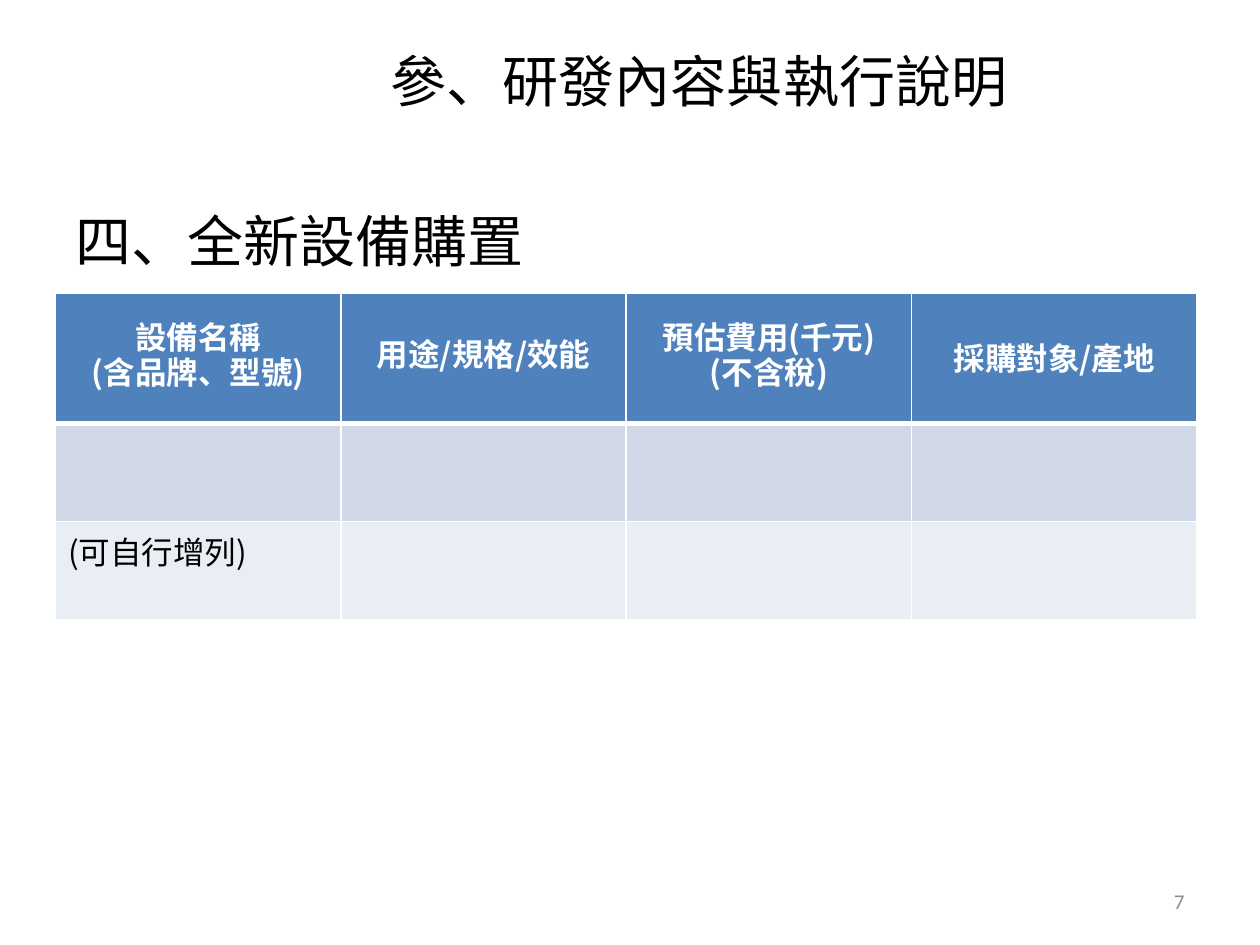
from lxml import etree
from pptx import Presentation
from pptx.dml.color import RGBColor
from pptx.enum.text import MSO_ANCHOR, PP_ALIGN
from pptx.oxml.ns import qn
from pptx.util import Inches, Pt

LEFT, MID, RIGHT = PP_ALIGN.LEFT, PP_ALIGN.CENTER, PP_ALIGN.RIGHT
TOP, CENTER = MSO_ANCHOR.TOP, MSO_ANCHOR.MIDDLE
CJK = "Noto Sans CJK SC"
HEADS = [
    (["設備名稱", "(含品牌、型號)"], 20),
    (["用途/規格/效能"], 20),
    (["預估費用(千元)", "(不含稅)"], 20),
    (["採購對象/產地"], 24),
]
NOTE = "(可自行增列)"
BANDS = ["4F81BD", "D0D8E8", "E9EDF4"]
ROWS = [1.03, 0.78, 0.78]
WIDTH = 9.06


def color(code):
    return RGBColor.from_string(code)


def assign(item, values):
    for name, value in values.items():
        setattr(item, name, value)


def write(frame, lines, size, ink="000000", face=CJK, bold=False, **para):
    for i, line in enumerate(lines):
        p = frame.paragraphs[0] if i == 0 else frame.add_paragraph()
        assign(p, para)
        run = p.add_run()
        run.text = line
        assign(run.font, {"size": Pt(size), "name": face, "bold": bold})
        run.font.color.rgb = color(ink)
        props = run.font._element
        etree.SubElement(props, qn("a:ea")).set("typeface", face)


def add_text(slide, box, line, size, anchor=CENTER, inset=0.05, **style):
    frame = slide.shapes.add_textbox(*map(Inches, box)).text_frame
    assign(frame, {"word_wrap": True, "vertical_anchor": anchor,
                   "margin_top": Inches(inset)})
    write(frame, [line], size, **style)


def edge(cell, side, width):
    line = etree.SubElement(cell._tc.get_or_add_tcPr(), qn("a:" + side))
    line.set("w", str(Pt(width)))
    fill = etree.SubElement(line, qn("a:solidFill"))
    etree.SubElement(fill, qn("a:srgbClr")).set("val", "FFFFFF")


def paint(cell, row):
    for side in ("lnL", "lnR", "lnT", "lnB"):
        thick = (row, side) in ((0, "lnB"), (1, "lnT"))
        edge(cell, side, 3 if thick else 1)
    cell.fill.solid()
    cell.fill.fore_color.rgb = color(BANDS[row])


def add_grid(slide):
    box = map(Inches, (0.44, 2.33, WIDTH, sum(ROWS)))
    grid = slide.shapes.add_table(len(ROWS), len(HEADS), *box).table
    for col in grid.columns:
        col.width = Inches(WIDTH / len(HEADS))
    for r, height in enumerate(ROWS):
        grid.rows[r].height = Inches(height)
        for c in range(len(HEADS)):
            paint(grid.cell(r, c), r)
    for c, (lines, space) in enumerate(HEADS):
        cell = grid.cell(0, c)
        assign(cell, {"vertical_anchor": CENTER,
                      "margin_left": Inches(0.07), "margin_right": Inches(0.07),
                      "margin_top": 0, "margin_bottom": 0})
        write(cell.text_frame, lines, 18, ink="FFFFFF", bold=True,
              alignment=MID, line_spacing=Pt(space))
    write(grid.cell(2, 0).text_frame, [NOTE], 18)


def main():
    deck = Presentation()
    assign(deck, {"slide_width": Inches(10), "slide_height": Inches(7.5)})
    slide = deck.slides.add_slide(deck.slide_layouts[6])
    add_text(slide, (7.17, 6.95, 2.33, 0.4), "7", 12, ink="8C8C8C",
             face="Calibri", alignment=RIGHT)
    add_text(slide, (2.4, 0.13, 6.3, 1.01), "參、研發內容與執行說明", 32,
             alignment=MID)
    add_grid(slide)
    add_text(slide, (0.5, 1.15, 9, 2.6), "四、全新設備購置", 32, anchor=TOP,
             inset=0.22, alignment=LEFT, line_spacing=1.5)
    deck.save("out.pptx")


if __name__ == "__main__":
    main()
